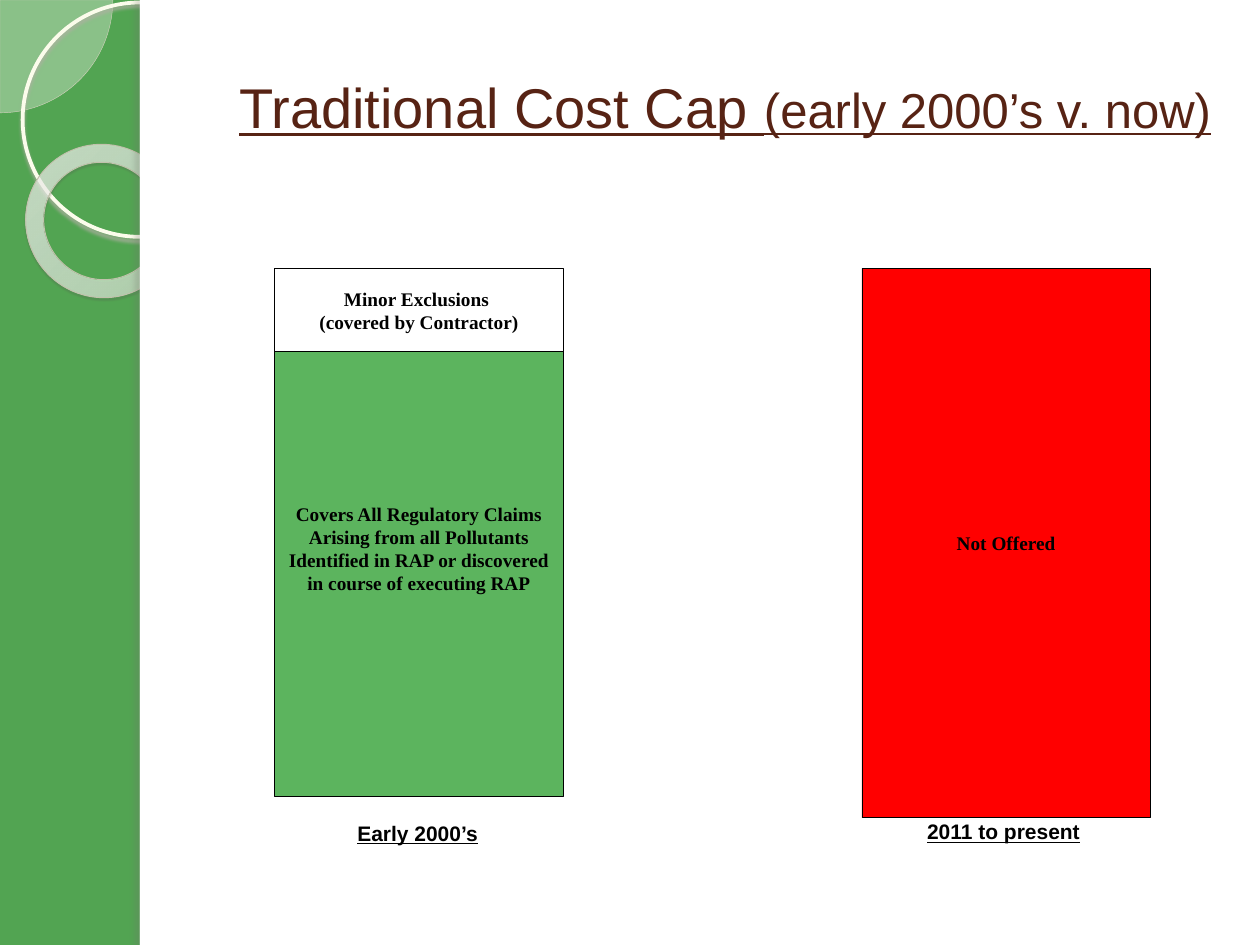
from dataclasses import dataclass
from typing import Optional

from lxml import etree
from pptx import Presentation
from pptx import util as u
from pptx.dml.color import RGBColor
from pptx.enum import shapes, text
from pptx.oxml import ns

WIDTH, HEIGHT = u.Inches(10), u.Inches(7.5)
COLORS = {
    "backdrop": "52A452", "white": "FFFFFF", "black": "000000",
    "covered": "5CB45E", "not_offered": "FF0000", "title": "572314",
    "pie": "FCFDF8", "pie_line": "CDCFB9",
    "ring": "FBFCEB", "ring_shadow": "AFB0A2",
    "donut_line": "C1C2AC", "donut_shadow": "58594F", "panel_shadow": "75756E",
}
DONUT_STOPS = [(0, "FDFDF9", 70), (70, "FFFFFC", 55), (100, "DCDFB4", 60)]


@dataclass
class Area:
    """Place on the slide, in percent of its width and height."""
    left: float
    top: float
    width: float
    height: float

    def emu(self) -> tuple:
        return (u.Emu(int(WIDTH * self.left / 100)), u.Emu(int(HEIGHT * self.top / 100)),
                u.Emu(int(WIDTH * self.width / 100)), u.Emu(int(HEIGHT * self.height / 100)))


@dataclass
class Shadow:
    color: str
    alpha: int
    blur: float
    distance: float
    angle: int


@dataclass
class Figure:
    kind: shapes.MSO_SHAPE
    area: Area
    fill: Optional[str] = None
    line: Optional[str] = None
    line_width: float = 0.25
    adjustments: tuple = ()
    rotation: float = 0
    shadow: Optional[Shadow] = None


@dataclass
class Block:
    area: Area
    fill: str
    words: str


@dataclass
class Caption:
    area: Area
    words: str


SHAPE = shapes.MSO_SHAPE
PIE = Figure(SHAPE.PIE, Area(-8.95, -11.93, 17.9, 23.87), "pie", "pie_line",
             adjustments=(0, 54.02))
RING = Figure(SHAPE.OVAL, Area(1.8, 0.27, 18.6, 24.8), None, "ring", 2.15,
              shadow=Shadow("ring_shadow", 85, 2, 2, 90))
DONUT = Figure(SHAPE.DONUT, Area(2, 15.33, 12.3, 16.13), None, "donut_line", 0.58,
               (0.118,), 38.6, Shadow("donut_shadow", 35, 1, 1.2, 75))
PANEL = Figure(SHAPE.RECTANGLE, Area(11.1, 0, 88.9, 100), "white")
PANEL_EDGE = Figure(SHAPE.RECTANGLE, Area(11.1, 0, 0.8, 100), "white",
                    shadow=Shadow("panel_shadow", 25, 3, 3, 180))

BAR_TOP, BAR_WIDTH = 28.4, 22.9
EARLY_LEFT, PRESENT_LEFT = 21.8, 68.4
BLOCKS = [
    Block(Area(EARLY_LEFT, 31.73, BAR_WIDTH, 52.53), "covered",
          "Covers All Regulatory Claims Arising from all Pollutants "
          "Identified in RAP or discovered in course of executing RAP"),
    Block(Area(EARLY_LEFT, BAR_TOP, BAR_WIDTH, 8.8), "white",
          "Minor Exclusions \n(covered by Contractor)"),
    Block(Area(PRESENT_LEFT, BAR_TOP, BAR_WIDTH, 58.13), "not_offered", "Not Offered"),
]
CAPTIONS = [
    Caption(Area(21.5, 86.13, 23.3, 4), "Early 2000’s"),
    Caption(Area(68, 86, 23.3, 4), "2011 to present"),
]


def rgb(name: str) -> RGBColor:
    return RGBColor.from_string(COLORS[name])


def add_color(parent, value: str, alpha: int) -> None:
    color = etree.SubElement(parent, ns.qn("a:srgbClr"), val=value)
    etree.SubElement(color, ns.qn("a:alpha"), val=str(alpha * 1000))


def add_shadow(shape, shadow: Shadow) -> None:
    effects = shape.element.spPr.find(ns.qn("a:effectLst"))
    outer = etree.SubElement(
        effects, ns.qn("a:outerShdw"), blurRad=str(u.Pt(shadow.blur)),
        dist=str(u.Pt(shadow.distance)), dir=str(shadow.angle * 60000),
        algn="tl", rotWithShape="0")
    add_color(outer, COLORS[shadow.color], shadow.alpha)


def draw_figure(page, figure: Figure):
    shape = page.shapes.add_shape(figure.kind, *figure.area.emu())
    shape.shadow.inherit = False
    shape.rotation = figure.rotation
    for index, value in enumerate(figure.adjustments):
        shape.adjustments[index] = value
    if figure.fill:
        shape.fill.solid()
        shape.fill.fore_color.rgb = rgb(figure.fill)
    else:
        shape.fill.background()
    if figure.line:
        shape.line.color.rgb = rgb(figure.line)
        shape.line.width = u.Pt(figure.line_width)
    else:
        shape.line.fill.background()
    if figure.shadow:
        add_shadow(shape, figure.shadow)
    return shape


def make_translucent(shape, alpha: int) -> None:
    color = shape.element.spPr.find(ns.qn("a:solidFill"))[0]
    etree.SubElement(color, ns.qn("a:alpha"), val=str(alpha * 1000))


def fill_radially(shape, stops: list) -> None:
    gradient = etree.Element(ns.qn("a:gradFill"), rotWithShape="1")
    stop_list = etree.SubElement(gradient, ns.qn("a:gsLst"))
    for position, color, alpha in stops:
        stop = etree.SubElement(stop_list, ns.qn("a:gs"), pos=str(position * 1000))
        add_color(stop, color, alpha)
    route = etree.SubElement(gradient, ns.qn("a:path"))
    route.set("path", "circle")
    etree.SubElement(route, ns.qn("a:fillToRect"),
                     l="-408000", t="-50000", r="508000", b="150000")
    properties = shape.element.spPr
    properties.replace(properties.find(ns.qn("a:noFill")), gradient)


def write_words(frame, words: str, font: str, size: int, underline: bool) -> None:
    frame.word_wrap = True
    frame.text = words
    for para in frame.paragraphs:
        para.alignment = text.PP_ALIGN.CENTER
        for span in para.runs:
            span.font.name, span.font.size = font, u.Pt(size)
            span.font.bold, span.font.underline = True, underline
            span.font.color.rgb = rgb("black")


def draw_block(page, block: Block) -> None:
    box = draw_figure(page, Figure(SHAPE.RECTANGLE, block.area, block.fill, "black"))
    box.text_frame.vertical_anchor = text.MSO_ANCHOR.MIDDLE
    write_words(box.text_frame, block.words, "Times New Roman", 11, False)


def draw_caption(page, caption: Caption) -> None:
    box = page.shapes.add_textbox(*caption.area.emu())
    write_words(box.text_frame, caption.words, "Arial", 12, True)
    box.text_frame.auto_size = text.MSO_AUTO_SIZE.SHAPE_TO_FIT_TEXT


def write_title(page) -> None:
    title = page.shapes.title
    title.left, title.top, title.width, title.height = Area(18, 2.93, 82, 16.67).emu()
    frame = title.text_frame
    frame.auto_size = text.MSO_AUTO_SIZE.NONE
    frame.vertical_anchor = text.MSO_ANCHOR.MIDDLE
    para = frame.paragraphs[0]
    para.alignment = text.PP_ALIGN.LEFT
    for words, size in (("Traditional Cost Cap ", 32), ("(early 2000’s v. now)", 28)):
        span = para.add_run()
        span.text = words
        span.font.name, span.font.size = "Arial", u.Pt(size)
        span.font.underline = True
        span.font.color.rgb = rgb("title")
    # Bring the title in front of the white panel
    title.element.getparent().append(title.element)


def main() -> None:
    deck = Presentation()
    deck.slide_width, deck.slide_height = WIDTH, HEIGHT
    page = deck.slides.add_slide(deck.slide_layouts[5])

    # Green side band with its circles, and the white panel
    page.background.fill.solid()
    page.background.fill.fore_color.rgb = rgb("backdrop")
    make_translucent(draw_figure(page, PIE), 33)
    draw_figure(page, RING)
    fill_radially(draw_figure(page, DONUT), DONUT_STOPS)
    for figure in (PANEL, PANEL_EDGE):
        draw_figure(page, figure)

    # Coverage bars and their periods
    for block in BLOCKS:
        draw_block(page, block)
    for caption in CAPTIONS:
        draw_caption(page, caption)

    write_title(page)
    deck.save("out.pptx")


if __name__ == "__main__":
    main()
